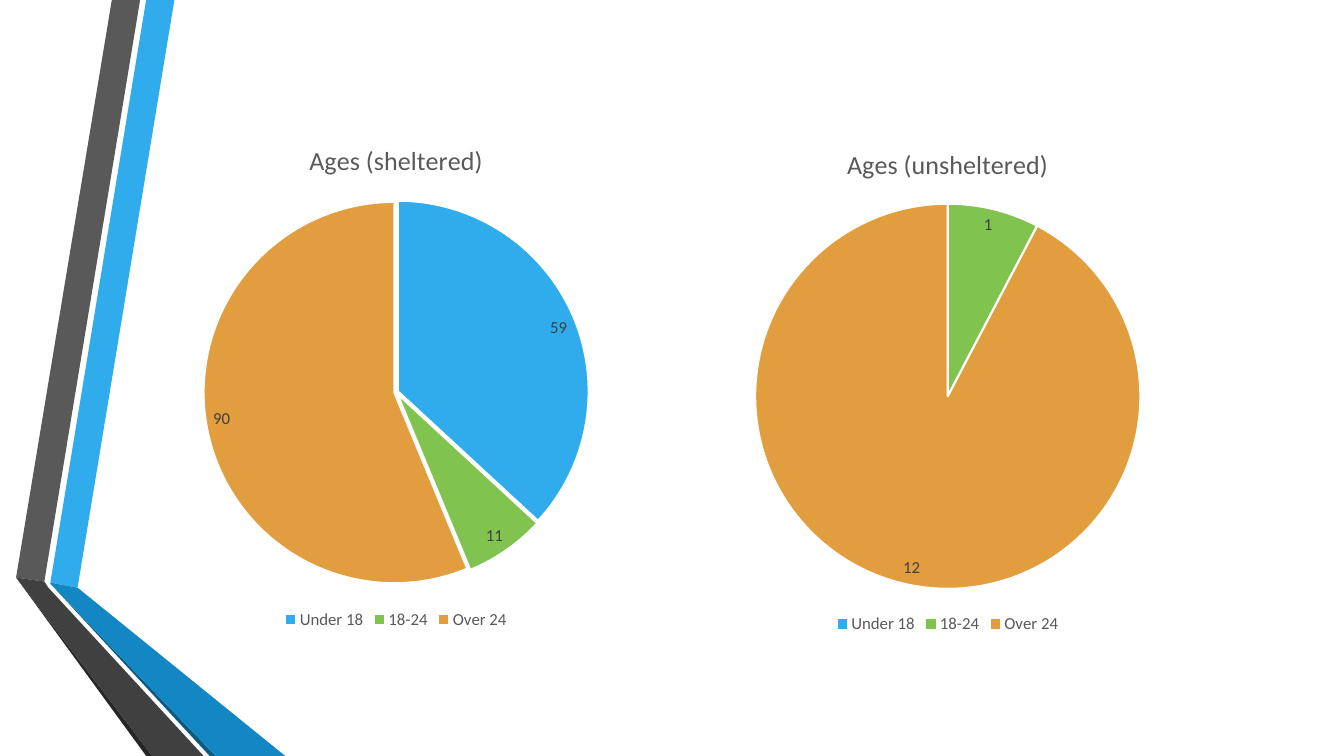
"""Build a slide with two pie charts of ages beside a folded ribbon."""
from lxml import etree
from pptx import Presentation
from pptx import util as u
from pptx.chart import data as chart_data
from pptx.dml import color
from pptx.enum import chart as charts
from pptx.oxml import ns

RIBBON = [
    ("30ACEC", [(0.5, 5.78), (0.77, 5.83), (1.73, 0), (1.45, 0)]),
    ("595959", [(1.39, 0), (1.11, 0), (0.16, 5.73), (0.44, 5.77)]),
    ("262626", [(0.16, 5.73), (1.45, 7.5), (1.51, 7.5)]),
    ("0C5A82", [(0.5, 5.79), (2.08, 7.5), (2.14, 7.5)]),
    ("1287C3", [(0.5, 5.79), (2.14, 7.5), (2.83, 7.5), (0.77, 5.83), (0.5, 5.78)]),
    ("404040", [(2.02, 7.5), (0.48, 5.83), (0.44, 5.77), (0.16, 5.73), (1.51, 7.5)]),
]
AGES = ["Under 18", "18-24", "Over 24"]
AGE_COLORS = ["30ACEC", "80C34F", "E29D3E"]


def rgb(hex_color):
    return color.RGBColor.from_string(hex_color)


def style_font(font, size=12, ink="595959", name="Calibri", bold=False):
    font.size, font.name, font.bold = u.Pt(size), name, bold
    font.color.rgb = rgb(ink)


def write_text(frame, text, **style):
    run = frame.paragraphs[0].add_run()
    run.text = text
    style_font(run.font, **style)


class Deck:
    def __init__(self, width, height):
        self.presentation = Presentation()
        self.presentation.slide_width = u.Inches(width)
        self.presentation.slide_height = u.Inches(height)
        self.slide = self.presentation.slides.add_slide(self.presentation.slide_layouts[6])
        self.slide.background.fill.solid()
        self.slide.background.fill.fore_color.rgb = rgb("FFFFFF")

    def band(self, fill, corners):
        points = [(u.Inches(x), u.Inches(y)) for x, y in corners]
        builder = self.slide.shapes.build_freeform(*points[0])
        builder.add_line_segments(points[1:], close=True)
        band = builder.convert_to_shape()
        band.shadow.inherit = False
        band.fill.solid()
        band.fill.fore_color.rgb = rgb(fill)
        band.line.fill.background()

    def pie(self, left, top, title, series_name, counts, explosion=0):
        ages = chart_data.CategoryChartData()
        ages.categories = AGES
        ages.add_series(series_name, counts)
        chart = self.slide.shapes.add_chart(
            charts.XL_CHART_TYPE.PIE, u.Inches(left), u.Inches(top),
            u.Inches(4.62), u.Inches(5.08), ages).chart
        style_font(chart.font, size=10, ink="000000")
        chart.has_title = True
        write_text(chart.chart_title.text_frame, title, size=18.6)
        chart.chart_title.include_in_layout = False
        chart.has_legend = True
        chart.legend.position = charts.XL_LEGEND_POSITION.BOTTOM
        chart.legend.include_in_layout = False
        style_font(chart.legend.font)

        plot = chart.plots[0]
        plot.vary_by_categories = True
        series = plot.series[0]
        for index, fill in enumerate(AGE_COLORS):
            wedge = series.points[index].format
            wedge.fill.solid()
            wedge.fill.fore_color.rgb = rgb(fill)
            wedge.line.color.rgb = rgb("FFFFFF")
            wedge.line.width = u.Pt(1.5)
        if explosion:
            gap = etree.Element(ns.qn("c:explosion"), val=str(explosion))
            series._element.find(ns.qn("c:dPt")).addprevious(gap)

        labels = series.data_labels
        labels.show_value = True
        labels.number_format = "0;;;"
        labels.number_format_is_linked = False
        labels.position = charts.XL_LABEL_POSITION.INSIDE_END
        style_font(labels.font, ink="404040")


def main():
    deck = Deck(13.33, 7.5)
    for fill, corners in RIBBON:
        deck.band(fill, corners)
    deck.pie(1.62, 1.21, "Ages (sheltered)", "Ages (sheltered)", [59, 11, 90], explosion=1)
    deck.pie(7.09, 1.25, "Ages (unsheltered)", "Series 1", [0, 1, 12])
    deck.presentation.save("out.pptx")


if __name__ == "__main__":
    main()
